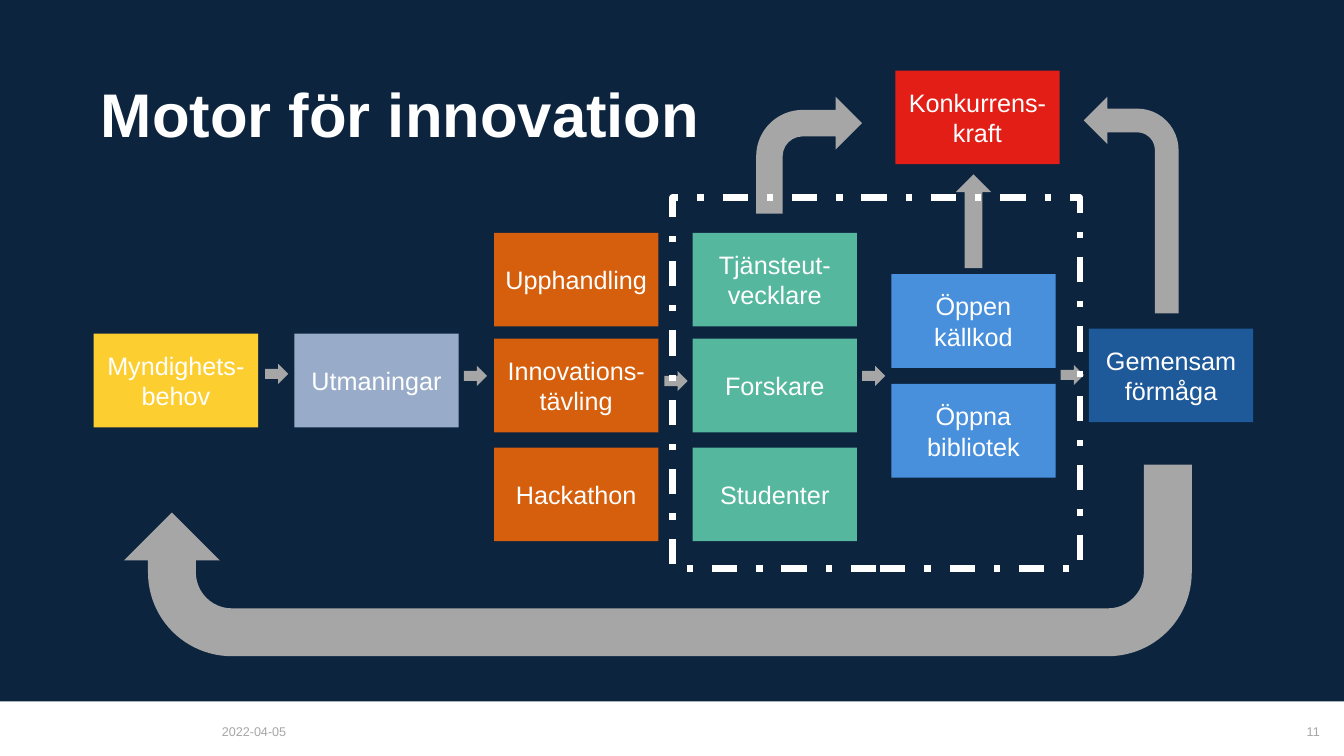
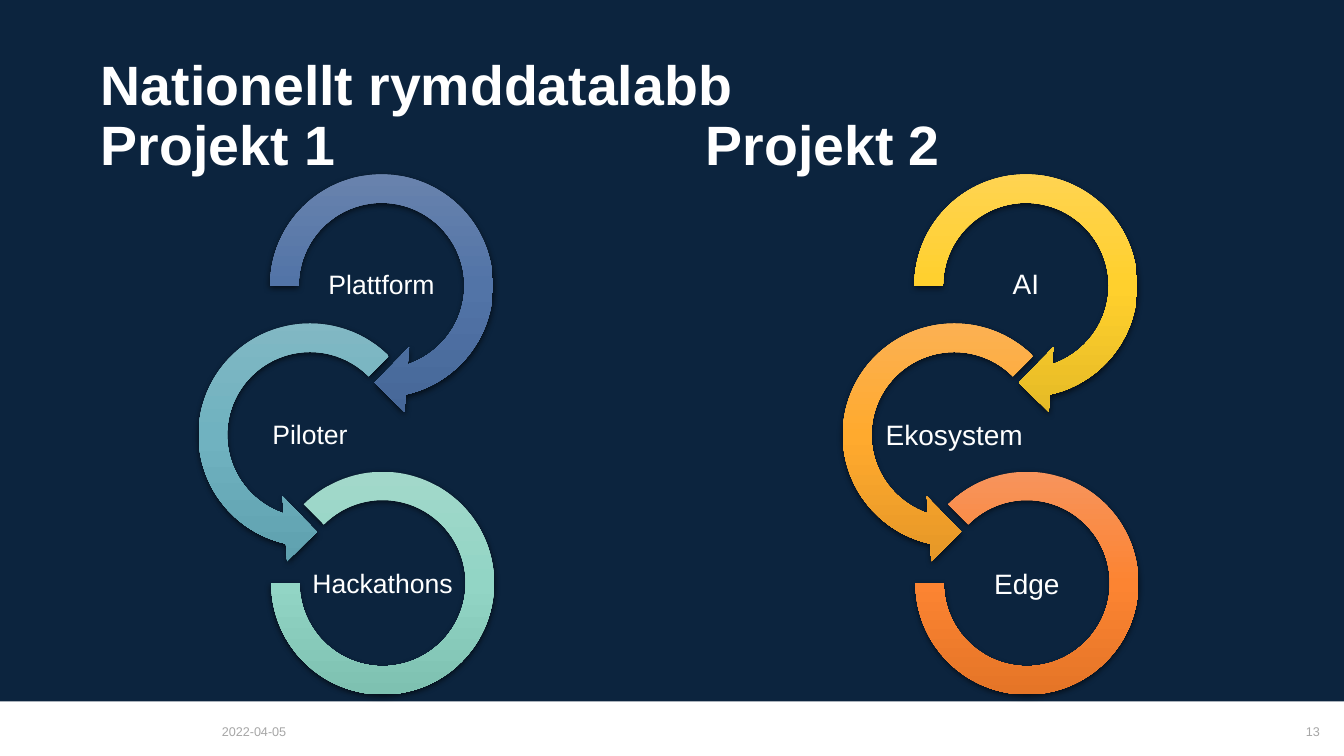
from pptx import Presentation
from pptx import util as u
from pptx.dml.color import RGBColor
from pptx.enum import dml, shapes, text
from pptx.oxml import parse_xml
from pptx.oxml.ns import nsdecls, qn

NAVY = RGBColor(0x0C, 0x24, 0x3E)
WHITE = RGBColor(0xFF, 0xFF, 0xFF)
GREY = RGBColor(0xA6, 0xA6, 0xA6)
YELLOW = RGBColor(0xFC, 0xCE, 0x30)
LAVENDER = RGBColor(0x98, 0xAC, 0xC9)
ORANGE = RGBColor(0xD5, 0x5F, 0x0D)
GREEN = RGBColor(0x56, 0xB7, 0x9F)
SKY = RGBColor(0x48, 0x8F, 0xDC)
BLUE = RGBColor(0x1E, 0x59, 0x99)
RED = RGBColor(0xE2, 0x1E, 0x16)
KIND = shapes.MSO_SHAPE
ALIGN = text.PP_ALIGN
ANCHOR = text.MSO_ANCHOR


def add_plain_shape(parent, kind, left, top, width, height, fill=None):
    shape = parent.add_shape(kind, u.Inches(left), u.Inches(top),
                             u.Inches(width), u.Inches(height))
    shape.shadow.inherit = False
    shape.line.fill.background()
    if fill is None:
        shape.fill.background()
    else:
        shape.fill.solid()
        shape.fill.fore_color.rgb = fill
    return shape


def write(box, words, size, color=WHITE, align=ALIGN.CENTER,
          anchor=ANCHOR.MIDDLE, inset=(0.1, 0.05), spacing=1.0, bold=False):
    frame = box.text_frame
    frame.text = words
    frame.word_wrap = True
    frame.auto_size = text.MSO_AUTO_SIZE.NONE
    frame.vertical_anchor = anchor
    frame.margin_left = frame.margin_right = u.Inches(inset[0])
    frame.margin_top = frame.margin_bottom = u.Inches(inset[1])
    para = frame.paragraphs[0]
    para.alignment = align
    para.line_spacing = spacing
    for span in para.runs:
        span.font.name = "Arial"
        span.font.size = u.Pt(size)
        span.font.bold = bold
        span.font.color.rgb = color


deck = Presentation()
deck.slide_width, deck.slide_height = u.Inches(13.33), u.Inches(7.5)
layout = deck.slide_layouts[5]

# Titles and footers
PAGES = [("Motor för innovation", 44, 6.54, "11"),
         ("Nationellt rymddatalabb\vProjekt 1\tProjekt 2", 39.6, 11.5, "13")]
for words, size, width, number in PAGES:
    page = deck.slides.add_slide(layout)
    title = page.shapes.title
    title.left, title.top = u.Inches(0.92), u.Inches(0.48)
    title.width, title.height = u.Inches(width), u.Inches(1.37)
    write(title, words, size, align=ALIGN.LEFT, inset=(0.08, 0.08),
          spacing=0.9, bold=True)
    for left, width, words, align in [(2.2, 0.8, "2022-04-05", ALIGN.LEFT),
                                      (10.6, 2.49, number, ALIGN.RIGHT)]:
        box = page.shapes.add_textbox(u.Inches(left), u.Inches(7.15),
                                      u.Inches(width), u.Inches(0.23))
        write(box, words, 9, GREY, align, ANCHOR.BOTTOM, (0, 0.05))
engine, projects = deck.slides

# Dark band, kept on the master behind everything
band = add_plain_shape(engine.shapes, KIND.RECTANGLE, 0, 0, 13.33, 6.96, NAVY)
deck.slide_master.placeholders[0].element.addprevious(band.element)

# Engine: boxes by column
BOXES = [
    (0.93, 3.31, YELLOW, "Myndighets-behov"),
    (2.92, 3.31, LAVENDER, "Utmaningar"),
    (4.9, 2.31, ORANGE, "Upphandling"),
    (4.9, 3.36, ORANGE, "Innovations-tävling"),
    (4.9, 4.44, ORANGE, "Hackathon"),
    (6.87, 2.31, GREEN, "Tjänsteut-vecklare"),
    (6.87, 3.36, GREEN, "Forskare"),
    (6.87, 4.44, GREEN, "Studenter"),
    (8.84, 2.72, SKY, "Öppen källkod"),
    (8.84, 3.81, SKY, "Öppna bibliotek"),
    (10.8, 3.26, BLUE, "Gemensam förmåga"),
    (8.88, 0.7, RED, "Konkurrens-kraft"),
]
for left, top, color, words in BOXES:
    box = add_plain_shape(engine.shapes, KIND.RECTANGLE, left, top, 1.63, 0.93, color)
    write(box, words, 18)

# Engine: small step arrows
for left, top in [(2.63, 3.61), (4.6, 3.63), (6.59, 3.68), (8.55, 3.63), (10.52, 3.62)]:
    add_plain_shape(engine.shapes, KIND.RIGHT_ARROW, left, top, 0.23, 0.2, GREY)

# Engine: large arrows
rise = add_plain_shape(engine.shapes, KIND.RIGHT_ARROW, 9.19, 2.02, 0.93, 0.35, GREY)
rise.rotation = 270
add_plain_shape(engine.shapes, KIND.BENT_ARROW, 7.5, 0.96, 1.05, 1.16, GREY)
bend = add_plain_shape(engine.shapes, KIND.BENT_ARROW, 10.75, 0.96, 0.94, 2.15, GREY)
bend.element.spPr.find(qn("a:xfrm")).set("flipH", "1")
feedback = add_plain_shape(engine.shapes, KIND.U_TURN_ARROW, 1.23, 4.61, 10.59, 1.9, GREY)
feedback.rotation = 180

# Engine: dashed frame
frame = add_plain_shape(engine.shapes, KIND.RECTANGLE, 6.67, 1.96, 4.04, 3.68)
frame.line.color.rgb = WHITE
frame.line.width = u.Pt(4.5)
frame.line.dash_style = dml.MSO_LINE.DASH_DOT

# Projects: tab stop for the second heading
para = projects.shapes.title.text_frame.paragraphs[0]
para.line_spacing = None
para._p.get_or_add_pPr().append(parse_xml(
    f'<a:tabLst {nsdecls("a")}><a:tab pos="{u.Inches(6)}" algn="l"/></a:tabLst>'))
para.line_spacing = 0.9

# Projects: one chain of three rings each
RINGS = [
    (KIND.CIRCULAR_ARROW, 2.5, 1.55, 2.57, (0.11, 11.423, 45, 108, 0.125), 3.07, 2.48),
    (KIND.LEFT_CIRCULAR_ARROW, 1.79, 3.03, 2.57, (0.11, 11.423, 63, 189, 0.125), 2.36, 3.97),
    (KIND.BLOCK_ARC, 2.69, 4.68, 2.21, (135, 108, 0.127), 3.08, 5.45),
]
CHAINS = [
    (0, 19, [("Plattform", "6C85AE", "5274A7", "466798"),
             ("Piloter", "84B9C4", "70B2C0", "5FA1AF"),
             ("Hackathons", "A2D8CA", "92D5C5", "7EC1B1")]),
    (6.39, 20, [("AI", "FFD457", "FFD02D", "E5BA26"),
                ("Ekosystem", "FBB259", "FFAA2E", "E59727"),
                ("Edge", "F7945C", "FC8432", "E57527")]),
]
for shift, size, steps in CHAINS:
    chain = projects.shapes.add_group_shape()
    for (words, *colors), ring_data in zip(steps, RINGS):
        kind, left, top, side, adjustments, label_left, label_top = ring_data
        ring = add_plain_shape(chain.shapes, kind, left + shift, top, side, side)
        for index, value in enumerate(adjustments):
            ring.adjustments[index] = value

        # Vertical gradient and soft shadow
        stops = "".join(f'<a:gs pos="{place}"><a:srgbClr val="{color}"/></a:gs>'
                        for place, color in zip((0, 50000, 100000), colors))
        properties = ring.element.spPr
        properties.replace(properties.find(qn("a:noFill")), parse_xml(
            f'<a:gradFill {nsdecls("a")} rotWithShape="1"><a:gsLst>{stops}</a:gsLst>'
            '<a:lin ang="5400000" scaled="0"/></a:gradFill>'))
        properties.find(qn("a:effectLst")).append(parse_xml(
            f'<a:outerShdw {nsdecls("a")} blurRad="{u.Pt(4.5)}" dist="{u.Pt(1.5)}" '
            'dir="5400000" algn="ctr" rotWithShape="0"><a:srgbClr val="000000">'
            '<a:alpha val="63000"/></a:srgbClr></a:outerShdw>'))

        label = chain.shapes.add_textbox(u.Inches(label_left + shift), u.Inches(label_top),
                                         u.Inches(1.43), u.Inches(0.71))
        write(label, words, size, inset=(0.01, 0.01), spacing=0.9)

deck.save("out.pptx")
